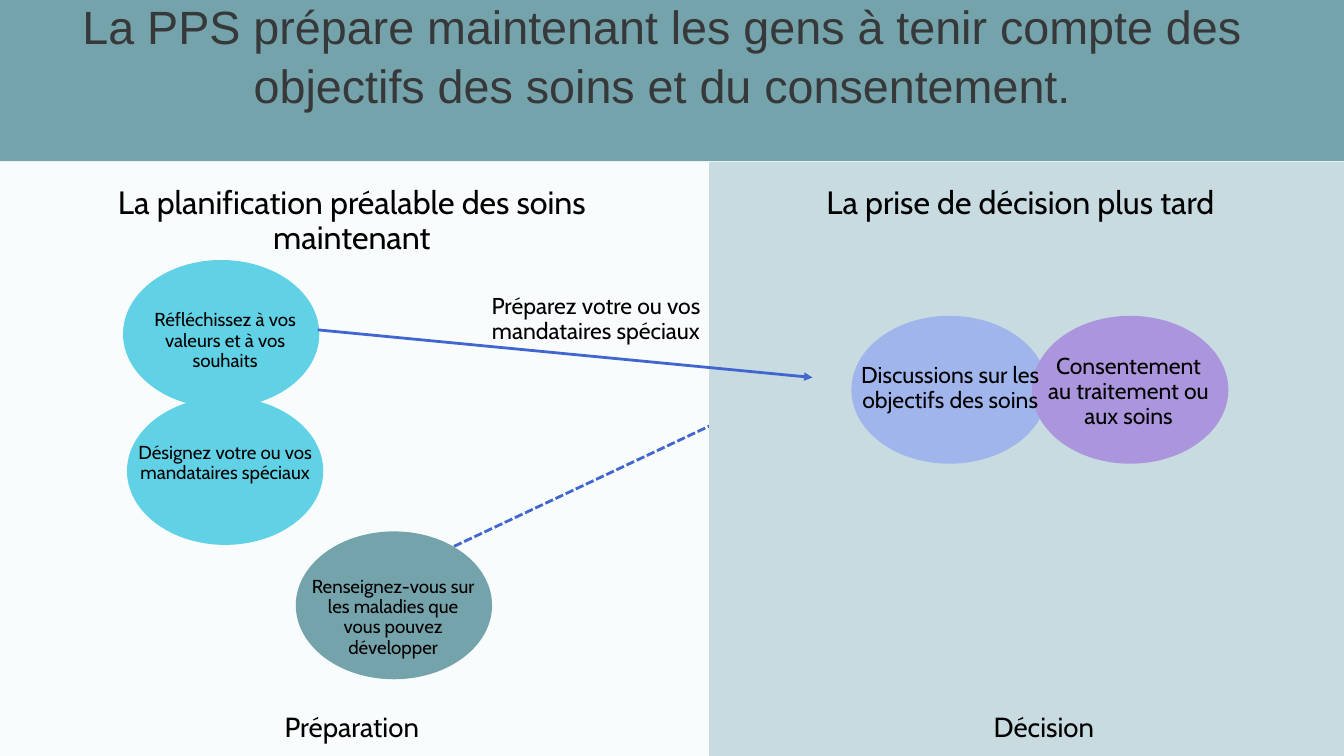
"""Build the slide on advance care planning now and decisions later."""
from lxml import etree
from pptx import Presentation
from pptx import util as u
from pptx.dml import color
from pptx.enum import dml, shapes, text
from pptx.oxml import ns

PANEL = (51.51, 26.39)
OVAL = (7.42, 5.59)
HEADING = (19.94, 1.35)
FOOTER = (19.94, 1.14)


def paint(hex_colour):
    """Turn a hex string into a colour."""
    return color.RGBColor.from_string(hex_colour)


def write(box, wording, size=20.1, font="Cabin", colour="000000", leading=1.09):
    """Put centred text with exact line spacing into a box."""
    frame = box.text_frame
    frame.word_wrap = True
    frame.auto_size = text.MSO_AUTO_SIZE.SHAPE_TO_FIT_TEXT
    frame.vertical_anchor = text.MSO_ANCHOR.TOP
    frame.margin_left = frame.margin_right = 0
    frame.margin_top = frame.margin_bottom = 0
    para = frame.paragraphs[0]
    para.alignment = text.PP_ALIGN.CENTER
    para.line_spacing = u.Pt(round(size * leading, 1))
    para.space_before = u.Pt(0)
    span = para.add_run()
    span.text = wording
    span.font.size = u.Pt(size)
    span.font.name = font
    span.font.color.rgb = paint(colour)


class Painter:
    """Hold the style and the current slide."""

    ink = "4266CF"
    teal = "75A3AB"
    cyan = "61D2E6"

    def __init__(self, page):
        """Keep the slide to draw on."""
        self.page = page

    def shape(self, kind, left, top, extent, fill):
        """Add a filled shape without an outline."""
        figure = self.page.shapes.add_shape(kind, *map(u.Cm, (left, top, *extent)))
        figure.shadow.inherit = False
        figure.fill.solid()
        figure.fill.fore_color.rgb = paint(fill)
        figure.line.fill.background()

    def panel(self, left, top, extent, fill):
        """Add a background rectangle."""
        self.shape(shapes.MSO_SHAPE.RECTANGLE, left, top, extent, fill)

    def oval(self, left, top, fill):
        """Add one topic oval."""
        self.shape(shapes.MSO_SHAPE.OVAL, left, top, OVAL, fill)

    def label(self, left, top, extent, wording, **style):
        """Add a text box."""
        box = self.page.shapes.add_textbox(*map(u.Cm, (left, top, *extent)))
        write(box, wording, **style)

    def title(self, left, top, extent, wording, **style):
        """Place the title placeholder in front of the shapes drawn so far."""
        box = self.page.shapes.title
        box.left, box.top, box.width, box.height = map(u.Cm, (left, top, *extent))
        write(box, wording, **style)
        box.element.getparent().append(box.element)

    def arrow(self, start, end, dash=None):
        """Add a straight arrow."""
        arrow = self.page.shapes.add_connector(
            shapes.MSO_CONNECTOR.STRAIGHT, *map(u.Cm, (*start, *end)))
        arrow.line.color.rgb = paint(self.ink)
        arrow.line.width = u.Pt(3)
        if dash:
            arrow.line.dash_style = dash
        properties = arrow.element.spPr
        stroke = properties.find(ns.qn("a:ln"))
        etree.SubElement(stroke, ns.qn("a:tailEnd"), type="triangle")
        etree.SubElement(properties, ns.qn("a:effectLst"))


def main():
    """Build and save the deck."""
    deck = Presentation()
    deck.slide_width, deck.slide_height = u.Cm(50.8), u.Cm(28.58)
    painter = Painter(deck.slides.add_slide(deck.slide_layouts[5]))
    goal = (30.71, 14.27)

    painter.panel(-24.71, 5.77, PANEL, "F9FCFD")
    painter.arrow((14.86, 21.74), goal, dash=dml.MSO_LINE.SQUARE_DOT)
    painter.panel(26.8, 6.12, (24, 26.39), "C7DBE1")
    painter.panel(-0.71, -2.06, (51.51, 8.15), painter.teal)
    painter.title(
        2.44, -0.18, (45.21, 4.39),
        "La PPS prépare maintenant les gens à tenir compte des objectifs "
        "des soins et du consentement.",
        size=50, font="Arial", colour="363839", leading=1.26)

    for left, wording in (
            (3.33, "La planification préalable des soins maintenant"),
            (28.6, "La prise de décision plus tard")):
        painter.label(left, 7.01, HEADING, wording, size=34.5)
    for left, wording in ((3.33, "Préparation"), (29.49, "Décision")):
        painter.label(left, 26.95, FOOTER, wording, size=29.6)

    for left, top, fill in (
            (4.65, 9.83, painter.cyan), (4.8, 15.01, painter.cyan),
            (11.18, 20.09, painter.teal),
            (32.18, 11.94, "A1B5ED"), (39.01, 11.94, "AB95DD")):
        painter.oval(left, top, fill)

    for left, top, extent, wording in (
            (5.03, 11.73, (6.96, 1.55),
             "Réfléchissez à vos valeurs et à vos souhaits"),
            (5.03, 16.74, (6.96, 1.57),
             "Désignez votre ou vos mandataires spéciaux"),
            (11.71, 21.79, (6.3, 2.34),
             "Renseignez-vous sur les maladies que vous pouvez développer")):
        painter.label(left, top, extent, wording)
    for left, top, extent, wording in (
            (18.26, 11.13, (8.53, 1.93),
             "Préparez votre ou vos mandataires spéciaux"),
            (31.65, 13.72, (8.53, 1.93),
             "Discussions sur les objectifs des soins"),
            (39.62, 13.39, (6.07, 2.79),
             "Consentement au traitement ou aux soins")):
        painter.label(left, top, extent, wording, size=24.6)

    painter.arrow((12.01, 12.47), goal)
    deck.save("out.pptx")


if __name__ == "__main__":
    main()
